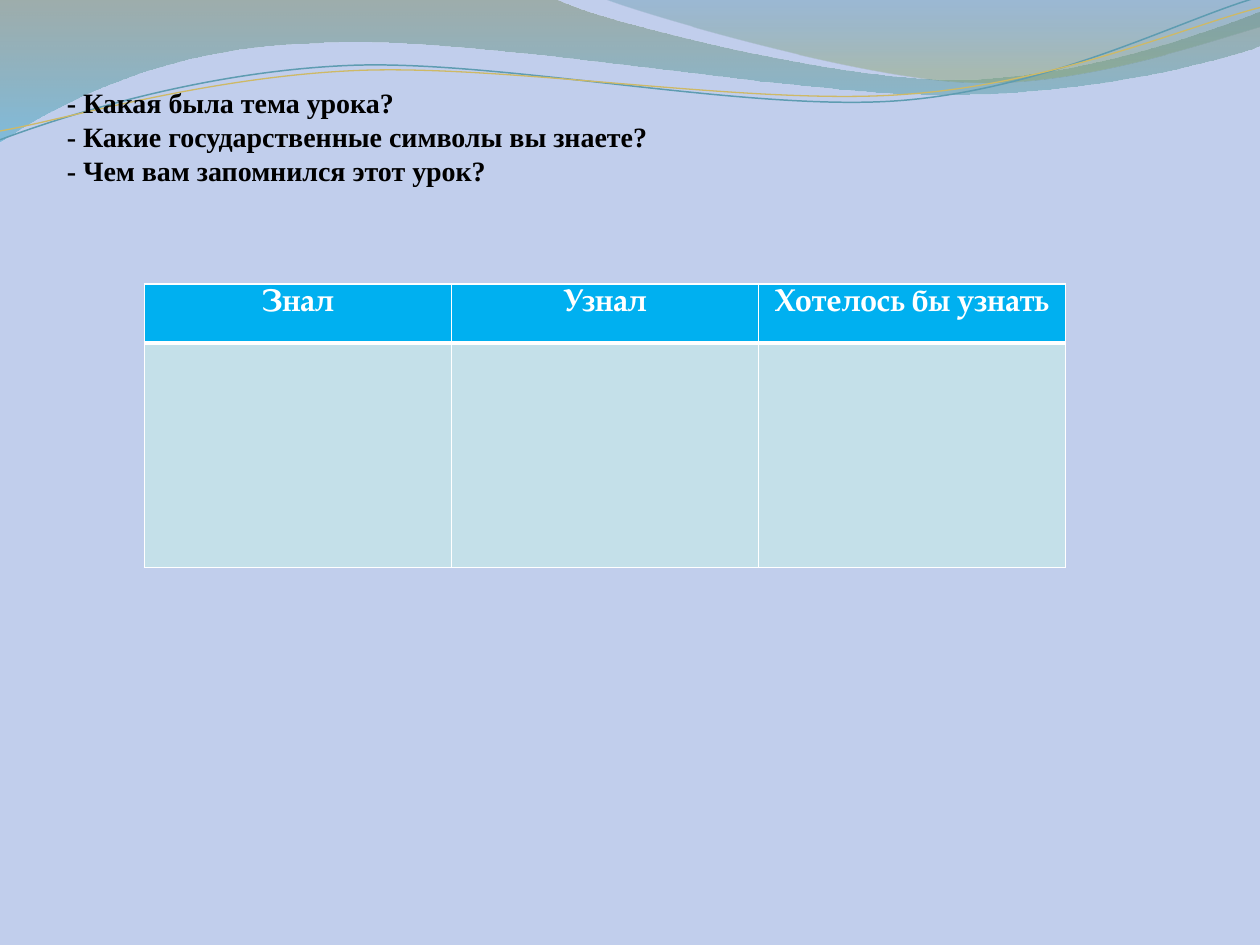
from dataclasses import dataclass

from lxml.etree import SubElement
from pptx import Presentation
from pptx.dml.color import RGBColor as RGB
from pptx.enum.text import MSO_ANCHOR as Anchor, PP_ALIGN as Align
from pptx.oxml.ns import qn
from pptx.util import Inches, Pt

WIDTH, HEIGHT = Inches(10), Inches(7.5)


@dataclass(frozen=True)
class Theme:
    background: str = "C1CEEC"
    text: str = "000000"
    white: str = "FFFFFF"
    header: str = "00B0F0"
    body: str = "C4E0E9"
    teal: str = "5E9CB1"
    gold: str = "CEB966"
    wide_wave: tuple = ((0, "74855E", 45), (1, "4AACCE", 55))
    small_wave: tuple = ((0, "45889F", 30), (0.8, "8AA36D", 45))
    title_font: str = "Times New Roman"
    table_font: str = "TeX Gyre Pagella"
    title_size: int = 16
    table_size: int = 18


THEME = Theme()

QUESTIONS = [
    "- Какая была тема урока?",
    "- Какие государственные символы вы знаете?",
    "- Чем вам запомнился этот урок?",
]
HEADERS = ["Знал", "Узнал", "Хотелось бы узнать"]

WIDE_WAVE = [
    (0, 0), (4.4, -0.01),
    (4.76, 0.17, 6.64, 0.63, 7.58, 0.63), (8.53, 0.63, 9.58, 0.26, 10, 0.09),
    (10.01, 0.36),
    (9.83, 0.44, 8.7, 0.76, 7.46, 0.75), (6.22, 0.75, 3.82, 0.28, 2.57, 0.34),
    (1.29, 0.36, 0.46, 0.83, -0.01, 1.13), (0, 0),
]
SMALL_WAVE = [
    (4.79, -0.01),
    (5.09, 0.11, 6.82, 0.62, 7.69, 0.65), (8.56, 0.69, 9.61, 0.32, 10, 0.21),
    (10, 0), (4.79, -0.01),
]
TEAL_CURVE = [
    (0, 1.11),
    (0.48, 0.93, 1.58, 0.57, 2.77, 0.52), (3.95, 0.47, 5.93, 0.89, 7.13, 0.8),
    (8.33, 0.71, 9.38, 0.15, 9.98, -0.02),
]
GOLD_CURVE = [
    (0, 1.04),
    (0.47, 0.96, 1.64, 0.61, 2.83, 0.56), (4.03, 0.51, 5.97, 0.84, 7.17, 0.75),
    (8.36, 0.67, 9.41, 0.21, 10, 0.06),
]


def percent(left, top, width, height):
    return (round(left * WIDTH / 100), round(top * HEIGHT / 100),
            round(width * WIDTH / 100), round(height * HEIGHT / 100))


def bend_lines(s, segments):
    lines = iter(list(s._element.iter(qn("a:lnTo"))))
    for segment in segments:
        line = next(lines)
        if len(segment) == 6:
            line.addprevious(curve := line.makeelement(qn("a:cubicBezTo")))
            for part in (line, next(lines), next(lines)):
                curve.append(part[0])
                part.getparent().remove(part)


def add_outline(slide, segments, close):
    start, *rest = segments
    points = [(Inches(seg[i]), Inches(seg[i + 1]))
              for seg in rest for i in range(0, len(seg), 2)]
    builder = slide.shapes.build_freeform(Inches(start[0]), Inches(start[1]))
    builder.add_line_segments(points, close=close)
    s = builder.convert_to_shape()
    s.shadow.inherit = False
    bend_lines(s, rest)
    return s


def add_wave(slide, segments, stops):
    s = add_outline(slide, segments, True)
    s.line.fill.background()
    s.fill.gradient()
    s.fill.gradient_angle = 270
    for stop, (position, color, _) in zip(s.fill.gradient_stops, stops):
        stop.position = position
        stop.color.rgb = RGB.from_string(color)
    for clr, (_, _, opacity) in zip(s._element.spPr.iter(qn("a:srgbClr")), stops):
        SubElement(clr, qn("a:alpha"), val=str(opacity * 1000))


def add_curve(slide, segments, color, width):
    s = add_outline(slide, segments, False)
    s.fill.background()
    s.line.color.rgb = RGB.from_string(color)
    s.line.width = Pt(width)


def format_font(p, name, size, color):
    p.font.name = name
    p.font.size = Pt(size)
    p.font.bold = True
    p.font.color.rgb = RGB.from_string(color)


def place_title(slide, lines):
    s = slide.shapes.title
    s.left, s.top, s.width, s.height = percent(4.3, 8.3, 90.6, 16.1)
    slide.shapes._spTree.append(s._element)
    tf = s.text_frame
    tf.word_wrap = True
    tf.vertical_anchor = Anchor.TOP
    tf.margin_top = Inches(0.06)
    tf.text = "\n".join(lines)
    for p in tf.paragraphs:
        p.alignment = Align.LEFT
        p.line_spacing = Pt(19.2)
        format_font(p, THEME.title_font, THEME.title_size, THEME.text)


def style_cell(cell, fill, bottom):
    tc_pr = cell._tc.get_or_add_tcPr()
    for side, width in (("L", 1), ("R", 1), ("T", 1), ("B", bottom)):
        line = SubElement(tc_pr, qn(f"a:ln{side}"), w=str(Pt(width)))
        SubElement(SubElement(line, qn("a:solidFill")), qn("a:srgbClr"), val=THEME.white)
    cell.fill.solid()
    cell.fill.fore_color.rgb = RGB.from_string(fill)
    cell.margin_left = cell.margin_right = Inches(0.07)
    cell.margin_top = cell.margin_bottom = 0


def add_answer_table(slide, headers):
    table = slide.shapes.add_table(2, len(headers), *percent(11.45, 30.05, 73.1, 30)).table
    table.first_row = table.horz_banding = False
    table.rows[0].height, table.rows[1].height = Inches(0.47), Inches(1.78)
    for column, header in enumerate(headers):
        cell = table.cell(0, column)
        style_cell(cell, THEME.header, 3)
        style_cell(table.cell(1, column), THEME.body, 1)
        p = cell.text_frame.paragraphs[0]
        p.text = header
        p.alignment = Align.CENTER
        p.line_spacing = 1.15
        format_font(p, THEME.table_font, THEME.table_size, THEME.white)


def main():
    prs = Presentation()
    prs.slide_width, prs.slide_height = WIDTH, HEIGHT
    slide = prs.slides.add_slide(prs.slide_layouts[5])
    slide.background.fill.solid()
    slide.background.fill.fore_color.rgb = RGB.from_string(THEME.background)
    add_wave(slide, WIDE_WAVE, THEME.wide_wave)
    add_wave(slide, SMALL_WAVE, THEME.small_wave)
    add_curve(slide, TEAL_CURVE, THEME.teal, 0.85)
    add_curve(slide, GOLD_CURVE, THEME.gold, 0.75)
    add_answer_table(slide, HEADERS)
    place_title(slide, QUESTIONS)
    prs.save("out.pptx")


if __name__ == "__main__":
    main()
